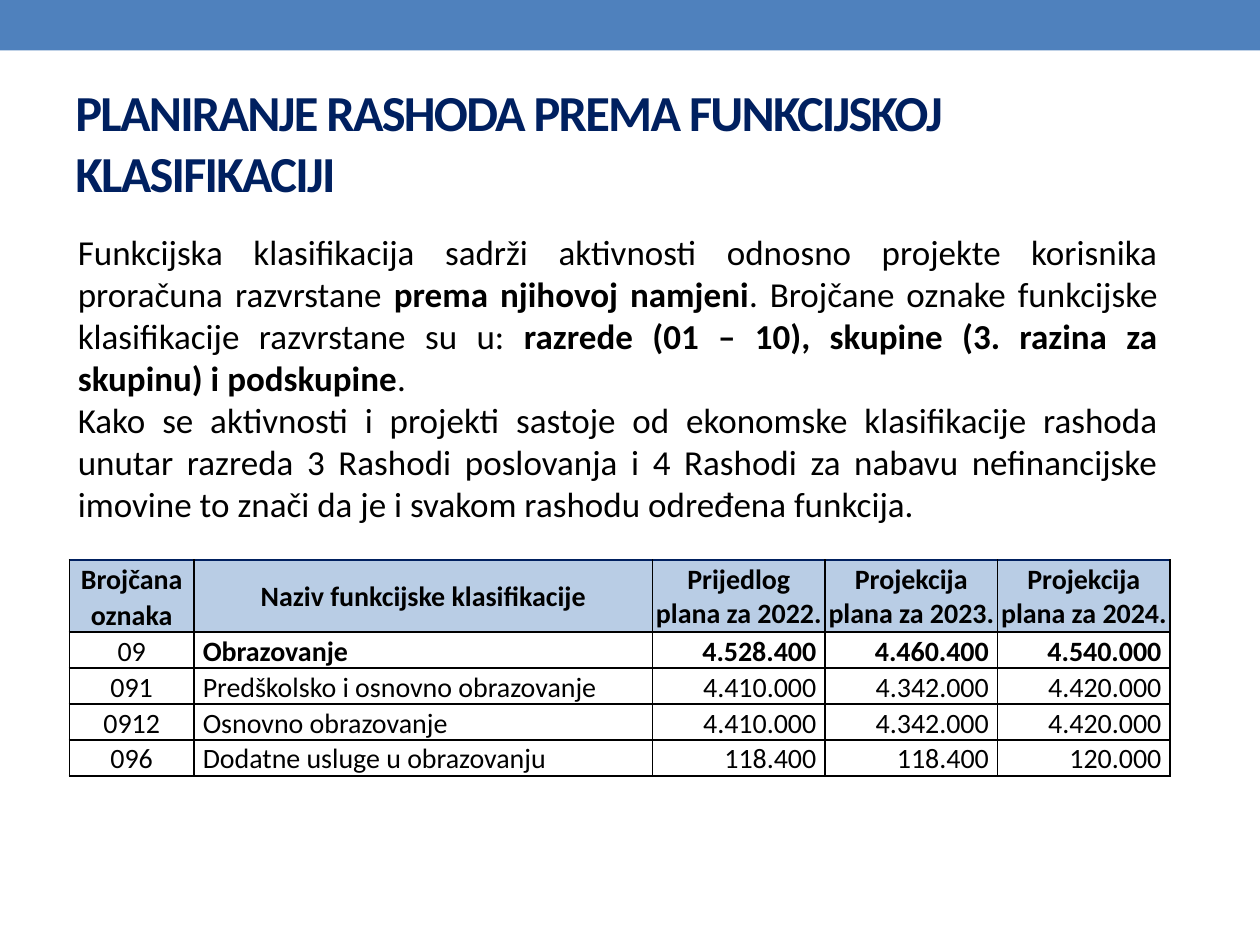
from lxml.etree import SubElement
from pptx import Presentation
from pptx.dml.color import RGBColor
from pptx.enum.shapes import MSO_SHAPE as SHAPE
from pptx.enum.text import MSO_ANCHOR as ANCHOR, PP_ALIGN as ALIGN
from pptx.oxml.ns import qn
from pptx.util import Pt

FONT = "Calibri"
BLACK, NAVY, WHITE, BLUE, PALE = "000000", "002060", "FFFFFF", "4F81BD", "B9CDE5"

TITLE = "PLANIRANJE RASHODA PREMA FUNKCIJSKOJ KLASIFIKACIJI"
BODY = [
    [("Funkcijska klasifikacija sadrži aktivnosti odnosno projekte korisnika "
      "proračuna razvrstane ", False),
     ("prema njihovoj namjeni", True),
     (". Brojčane oznake funkcijske klasifikacije razvrstane su u: ", False),
     ("razrede (01 – 10), skupine (3. razina za skupinu) i podskupine", True),
     (".", False)],
    [("Kako se aktivnosti i projekti sastoje od ekonomske klasifikacije rashoda "
      "unutar razreda 3 Rashodi poslovanja i 4 Rashodi za nabavu nefinancijske "
      "imovine to znači da je i svakom rashodu određena funkcija.", False)],
]
HEADER = ["Brojčana oznaka", "Naziv funkcijske klasifikacije",
          "Prijedlog plana za 2022.", "Projekcija plana za 2023.",
          "Projekcija plana za 2024."]
ROWS = [
    ["09", "Obrazovanje", "4.528.400", "4.460.400", "4.540.000"],
    ["091", "Predškolsko i osnovno obrazovanje", "4.410.000", "4.342.000", "4.420.000"],
    ["0912", "Osnovno obrazovanje", "4.410.000", "4.342.000", "4.420.000"],
    ["096", "Dodatne usluge u obrazovanju", "118.400", "118.400", "120.000"],
]
COL_WIDTHS = [71.3, 262, 98.6, 98.6, 98.6]
ROW_HEIGHTS = [29.5, 37.5] + [18] * len(ROWS)
ALIGNS = [ALIGN.CENTER, ALIGN.LEFT] + [ALIGN.RIGHT] * 3


def rgb(color):
    """Turn a hex string into a colour."""
    return RGBColor.from_string(color)


def add_run(p, text, size, color=BLACK, bold=False):
    """Append one formatted run to a paragraph."""
    r = p.add_run()
    r.text = text
    r.font.name, r.font.size, r.font.bold = FONT, Pt(size), bold
    r.font.color.rgb = rgb(color)
    return r


def add_bar(s, x, y, w, h, color):
    """Draw a plain filled rectangle."""
    sp = s.shapes.add_shape(SHAPE.RECTANGLE, Pt(x), Pt(y), Pt(w), Pt(h))
    sp.shadow.inherit = False
    sp.fill.solid()
    sp.fill.fore_color.rgb = rgb(color)
    sp.line.fill.background()


def add_text(s, x, y, w, h, paragraphs, size, color=BLACK, align=ALIGN.LEFT,
             anchor=ANCHOR.TOP, spacing=0):
    """Add a wrapped text box from lists of (text, bold) runs."""
    tf = s.shapes.add_textbox(Pt(x), Pt(y), Pt(w), Pt(h)).text_frame
    tf.word_wrap, tf.vertical_anchor = True, anchor
    for i, runs in enumerate(paragraphs):
        p = tf.add_paragraph() if i else tf.paragraphs[0]
        p.alignment = align
        for text, bold in runs:
            r = add_run(p, text, size, color, bold)
            if spacing:
                r.font._element.set("spc", str(spacing * 100))


def style_cell(cell, fill, borders):
    """Set the fill and the 1 pt borders, given as side and colour in L, R, T, B order."""
    tc_pr = cell._tc.get_or_add_tcPr()
    for side, color in borders.items():
        ln = SubElement(tc_pr, qn(f"a:ln{side}"), w=str(Pt(1)))
        SubElement(SubElement(ln, qn("a:solidFill")), qn("a:srgbClr"), val=color)
    cell.fill.solid()
    cell.fill.fore_color.rgb = rgb(fill)


def write_cell(cell, text, align, bold, tight):
    """Write one table cell, with narrow margins if tight."""
    cell.vertical_anchor = ANCHOR.MIDDLE
    cell.margin_left = cell.margin_right = Pt(0.75 if tight else 5)
    cell.margin_top, cell.margin_bottom = Pt(0.75 if tight else 0), 0
    p = cell.text_frame.paragraphs[0]
    p.alignment = align
    if not tight:
        p.line_spacing = 1.07
    add_run(p, text, 16, bold=bold)


def add_budget_table(s, x, y):
    """Add the table: an empty merged row, a header row and the data rows."""
    n_rows, n_cols = len(ROW_HEIGHTS), len(COL_WIDTHS)
    table = s.shapes.add_table(n_rows, n_cols, Pt(x), Pt(y), Pt(sum(COL_WIDTHS)),
                               Pt(sum(ROW_HEIGHTS))).table
    for col, width in zip(table.columns, COL_WIDTHS):
        col.width = Pt(width)
    for row, height in zip(table.rows, ROW_HEIGHTS):
        row.height = Pt(height)
    for c in range(n_cols):
        style_cell(table.cell(0, c), WHITE, {"B": NAVY})
    table.cell(0, 0).merge(table.cell(0, n_cols - 1))
    for i, values in enumerate([HEADER] + ROWS):
        head = i == 0
        borders = dict.fromkeys("LRTB", BLACK)
        if head:
            borders["T"] = NAVY
        for c, text in enumerate(values):
            cell = table.cell(i + 1, c)
            style_cell(cell, PALE if head else WHITE, borders)
            write_cell(cell, text, ALIGN.CENTER if head else ALIGNS[c],
                       bold=head or (i == 1 and c > 0), tight=head and c > 1)


def main():
    """Build and save the slide."""
    prs = Presentation()
    prs.slide_width, prs.slide_height = Pt(720), Pt(540)
    s = prs.slides.add_slide(prs.slide_layouts[6])
    add_bar(s, 0, 0, 720, 28.8, BLUE)
    add_text(s, 36, 42, 648, 77.8, [[(TITLE, True)]], 28.8, NAVY,
             anchor=ANCHOR.MIDDLE, spacing=-1)
    add_budget_table(s, 39.6, 290.6)
    add_text(s, 37.4, 128.2, 631.4, 177, BODY, 20, align=ALIGN.JUSTIFY)
    prs.save("out.pptx")


if __name__ == "__main__":
    main()
